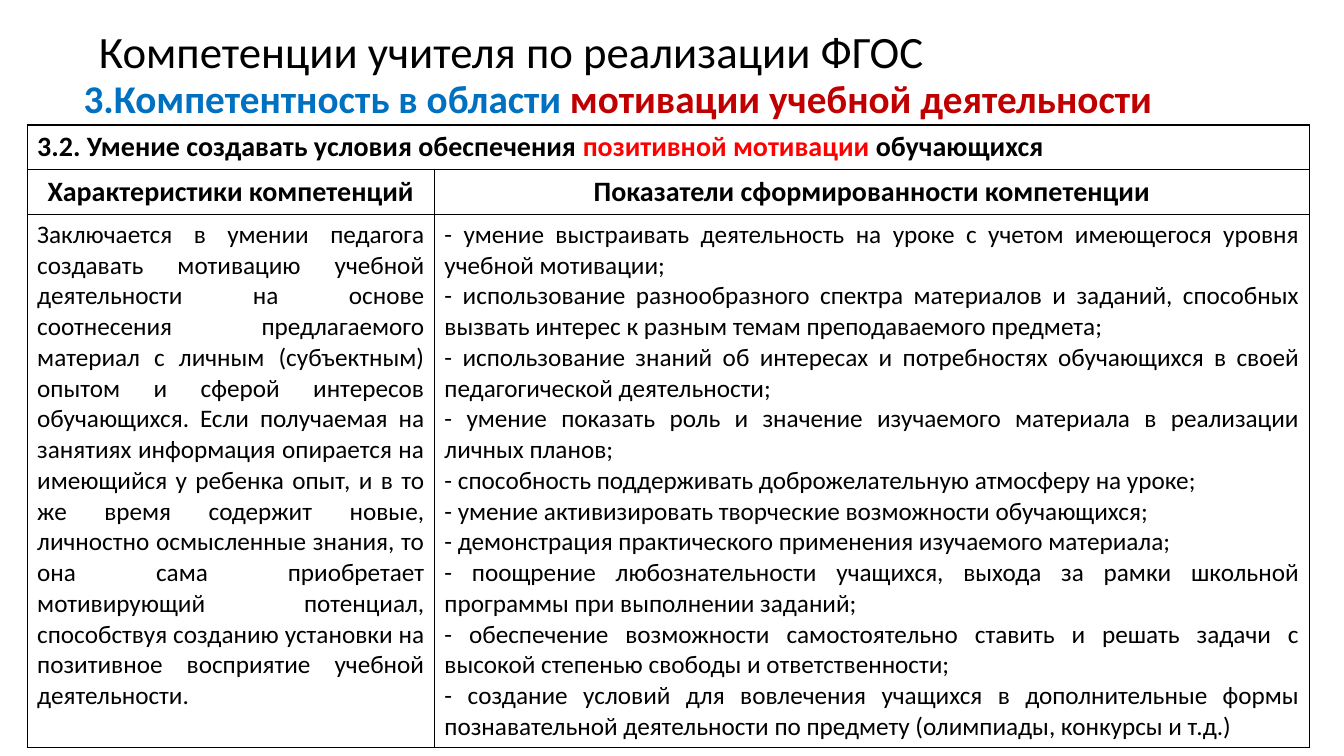
from lxml.etree import SubElement
from pptx import Presentation
from pptx.dml.color import RGBColor
from pptx.enum.text import MSO_ANCHOR, MSO_AUTO_SIZE, PP_ALIGN
from pptx.oxml.ns import qn
from pptx.util import Pt

BLACK = RGBColor(0x00, 0x00, 0x00)
BLUE = RGBColor(0x00, 0x70, 0xC0)
CRIMSON = RGBColor(0xC0, 0x00, 0x00)
RED = RGBColor(0xFF, 0x00, 0x00)
FONT = "Calibri"

# Content: a paragraph is a list of (text, colour) runs or a plain string
TITLE = ["Компетенции учителя по реализации ФГОС"]
AREA = [[("3.Компетентность в области ", BLUE),
         ("мотивации учебной деятельности", CRIMSON)]]
SKILL = [[("3.2. Умение создавать условия обеспечения ", BLACK),
          ("позитивной мотивации ", RED),
          ("обучающихся", BLACK)]]
HEADS = ["Характеристики компетенций", "Показатели сформированности компетенции"]
TRAITS = [
    "Заключается в умении педагога создавать мотивацию учебной деятельности "
    "на основе соотнесения предлагаемого материал с личным (субъектным) опытом "
    "и сферой интересов обучающихся. Если получаемая на занятиях информация "
    "опирается на имеющийся у ребенка опыт, и в то же время содержит новые, "
    "личностно осмысленные знания, то она сама приобретает мотивирующий "
    "потенциал, способствуя созданию установки на позитивное восприятие "
    "учебной деятельности.",
]
SIGNS = [
    "- умение выстраивать деятельность на уроке с учетом имеющегося уровня учебной мотивации;",
    "- использование разнообразного спектра материалов и заданий, способных "
    "вызвать интерес к разным темам преподаваемого предмета;",
    "- использование знаний об интересах и потребностях обучающихся в своей "
    "педагогической деятельности;",
    "- умение показать роль и значение изучаемого материала в реализации личных планов;",
    "- способность поддерживать доброжелательную атмосферу на уроке;",
    "- умение активизировать творческие возможности обучающихся;",
    "- демонстрация практического применения изучаемого материала;",
    "- поощрение любознательности учащихся, выхода за рамки школьной программы "
    "при выполнении заданий;",
    "- обеспечение возможности самостоятельно ставить и решать задачи с высокой "
    "степенью свободы и ответственности;",
    "- создание условий для вовлечения учащихся в дополнительные формы "
    "познавательной деятельности по предмету (олимпиады, конкурсы и т.д.)",
]
COLS = [290.9, 625]
ROWS = [32, 31.8, 381]


def write(frame, paras, size=18, bold=False, align=PP_ALIGN.LEFT, lead=1.0, before=0):
    frame.word_wrap = True
    for i, runs in enumerate(paras):
        para = frame.add_paragraph() if i else frame.paragraphs[0]
        para.alignment = align
        para.line_spacing = lead
        para.space_before = Pt(before)
        for text, color in [(runs, BLACK)] if isinstance(runs, str) else runs:
            run = para.add_run()
            run.text = text
            font = run.font
            font.name, font.size, font.bold = FONT, Pt(size), bold
            font.color.rgb = color


def frame_cell(cell):
    """Clear the fill and draw a thin black line on each side."""
    cell.fill.background()
    props = cell._tc.get_or_add_tcPr()
    for i, side in enumerate("LRTB"):
        line = SubElement(props, qn(f"a:ln{side}"), w=str(Pt(1)))
        paint = SubElement(line, qn("a:solidFill"))
        SubElement(paint, qn("a:srgbClr"), val=str(BLACK))
        props.insert(i, line)


deck = Presentation()
deck.slide_width, deck.slide_height = Pt(960), Pt(540)
slide = deck.slides.add_slide(deck.slide_layouts[5])

# Title
title = slide.shapes.title
title.left, title.top, title.width, title.height = Pt(63.4), Pt(24.5), Pt(828), Pt(28.8)
title.text_frame.auto_size = MSO_AUTO_SIZE.NONE
title.text_frame.vertical_anchor = MSO_ANCHOR.MIDDLE
write(title.text_frame, TITLE, size=32, lead=0.9)

# Competence area
area = slide.shapes.add_textbox(Pt(52.6), Pt(53.3), Pt(828), Pt(106.6))
write(area.text_frame, AREA, size=28, bold=True, lead=0.9, before=10)

# Competence table
shape = slide.shapes.add_table(len(ROWS), len(COLS), Pt(19.4), Pt(89.3),
                               Pt(sum(COLS)), Pt(sum(ROWS)))
table = shape.table
table.first_row = table.horz_banding = False
for col, width in zip(table.columns, COLS):
    col.width = Pt(width)
for row, height in zip(table.rows, ROWS):
    row.height = Pt(height)
for cell in table.iter_cells():
    frame_cell(cell)

table.cell(0, 0).merge(table.cell(0, 1))
write(table.cell(0, 0).text_frame, SKILL, size=20, bold=True)
for i, (head, body) in enumerate(zip(HEADS, [TRAITS, SIGNS])):
    write(table.cell(1, i).text_frame, [head], size=20, bold=True, align=PP_ALIGN.CENTER)
    write(table.cell(2, i).text_frame, body, align=PP_ALIGN.JUSTIFY)

deck.save("out.pptx")
